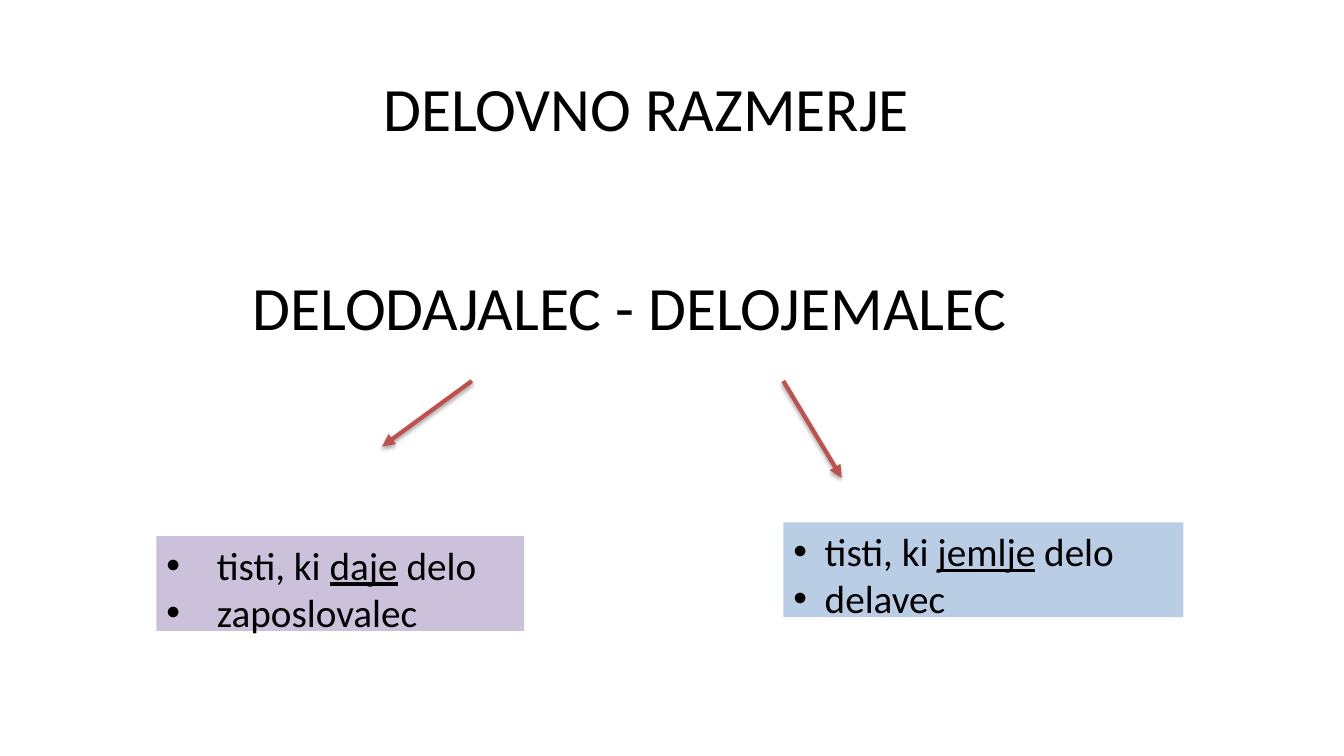
from pptx import Presentation
from pptx.dml.color import RGBColor
from pptx.enum.shapes import MSO_CONNECTOR
from pptx.enum.text import MSO_ANCHOR, MSO_AUTO_SIZE, PP_ALIGN
from pptx.oxml import parse_xml
from pptx.oxml.ns import nsdecls, qn
from pptx.util import Cm, Pt

BLACK = RGBColor(0x00, 0x00, 0x00)
RED = RGBColor(0xC0, 0x50, 0x4D)
LILAC = RGBColor(0xCC, 0xC1, 0xDA)
PALE_BLUE = RGBColor(0xB9, 0xCD, 0xE5)
FONT = "Calibri"
TWO_CONTENT_LAYOUT = 3
STRAIGHT = MSO_CONNECTOR.STRAIGHT
MIDDLE, TOP = MSO_ANCHOR.MIDDLE, MSO_ANCHOR.TOP
CENTER, LEFT = PP_ALIGN.CENTER, PP_ALIGN.LEFT
NO_FIT, GROW = MSO_AUTO_SIZE.NONE, MSO_AUTO_SIZE.SHAPE_TO_FIT_TEXT


def place(part, left, top, width, height):
    """Move and size a part of the slide, in centimetres."""
    part.left, part.top = Cm(left), Cm(top)
    part.width, part.height = Cm(width), Cm(height)


def add_run(paragraph, text, size=44, color=BLACK, underline=False):
    """Append formatted text to a paragraph."""
    run = paragraph.add_run()
    run.text = text
    run.font.name = FONT
    run.font.size = Pt(size)
    run.font.color.rgb = color
    run.font.underline = underline


def set_frame(frame, anchor, fit):
    """Set wrapping, anchoring and fitting of a text frame."""
    frame.word_wrap = True
    frame.auto_size = fit
    frame.vertical_anchor = anchor


def write_heading(heading, text, box):
    """Place a large centred heading."""
    place(heading, *box)
    set_frame(heading.text_frame, MIDDLE, NO_FIT)
    paragraph = heading.text_frame.paragraphs[0]
    paragraph.alignment = CENTER
    add_run(paragraph, text)


def add_bullet(paragraph, indent):
    """Give a paragraph a round bullet with a hanging indent."""
    properties = paragraph._p.get_or_add_pPr()
    properties.set("marL", str(Cm(indent)))
    properties.set("indent", str(-Cm(indent)))
    properties.append(parse_xml(f'<a:buFont {nsdecls("a")} typeface="Arial"/>'))
    properties.append(parse_xml(f'<a:buChar {nsdecls("a")} char="•"/>'))


def write_role(role, box, fill, indent, verb, synonym):
    """Fill a coloured list that explains one party."""
    place(role, *box)
    role.fill.solid()
    role.fill.fore_color.rgb = fill
    frame = role.text_frame
    set_frame(frame, TOP, GROW)
    meaning, other_name = frame.paragraphs[0], frame.add_paragraph()
    for paragraph in (meaning, other_name):
        paragraph.alignment = LEFT
        paragraph.space_before = Pt(0)
        add_bullet(paragraph, indent)
    add_run(meaning, "tisti, ki ", size=28)
    add_run(meaning, verb, size=28, underline=True)
    add_run(meaning, " delo", size=28)
    add_run(other_name, synonym, size=28)


def add_arrow(slide, start, end):
    """Draw a red arrow with a soft shadow below it."""
    arrow = slide.shapes.add_connector(STRAIGHT, *map(Cm, start + end))
    arrow.line.color.rgb = RED
    arrow.line.width = Pt(3)
    properties = arrow.element.spPr
    properties.find(qn("a:ln")).append(
        parse_xml(f'<a:tailEnd {nsdecls("a")} type="triangle"/>'))
    properties.append(parse_xml(
        f'<a:effectLst {nsdecls("a")}>'
        f'<a:outerShdw blurRad="{Pt(3.1)}" dist="{Pt(1.8)}" dir="5400000" rotWithShape="0">'
        '<a:srgbClr val="000000"><a:alpha val="35000"/></a:srgbClr>'
        '</a:outerShdw></a:effectLst>'))


def main():
    """Build and save the slide."""
    deck = Presentation()
    deck.slide_width, deck.slide_height = Cm(33.87), Cm(19.05)
    slide = deck.slides.add_slide(deck.slide_layouts[TWO_CONTENT_LAYOUT])
    parties, employer, worker = slide.placeholders

    write_heading(parties, "DELODAJALEC - DELOJEMALEC", (0.64, 6.12, 30.48, 3.18))
    add_arrow(slide, (11.89, 9.6), (9.63, 11.25))
    add_arrow(slide, (19.74, 9.6), (21.21, 12.04))
    topic = slide.shapes.add_textbox(0, 0, 0, 0)
    write_heading(topic, "DELOVNO RAZMERJE", (1.9, 0.66, 28.78, 4.09))
    write_role(employer, (3.94, 13.51, 9.27, 2.64), LILAC, 1.27, "daje", "zaposlovalec")
    write_role(worker, (19.74, 13.16, 10.08, 2.64), PALE_BLUE, 0.79, "jemlje", "delavec")
    deck.save("out.pptx")


if __name__ == "__main__":
    main()
